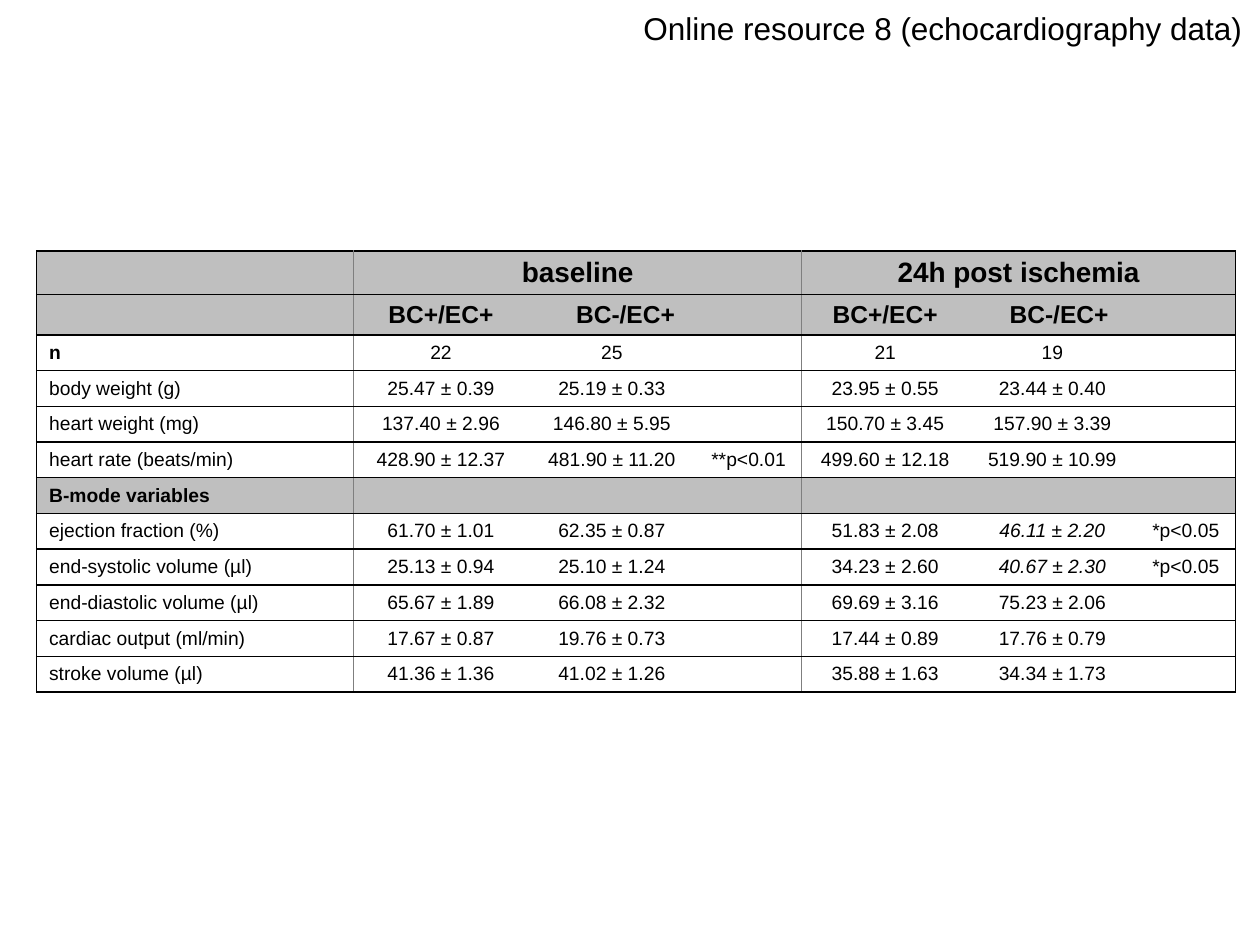
from lxml import etree
from pptx import Presentation
from pptx.dml.color import RGBColor
from pptx.enum.text import MSO_ANCHOR, PP_ALIGN
from pptx.oxml.ns import qn
from pptx.util import Cm, Pt

MIDDLE = MSO_ANCHOR.MIDDLE
LEFT, CENTER = PP_ALIGN.LEFT, PP_ALIGN.CENTER
BLACK, WHITE, GRAY, RULE = "000000", "FFFFFF", "BFBFBF", "7F7F7F"

# Content
TITLE = "Online resource 8 (echocardiography data)"
ROWS = [
    ("", "baseline", "", "", "24h post ischemia", "", ""),
    ("", "BC+/EC+", "BC-/EC+", "", "BC+/EC+", "BC-/EC+", ""),
    ("n", "22", "25", "", "21", "19", ""),
    ("body weight (g)", "25.47 ± 0.39", "25.19 ± 0.33", "",
     "23.95 ± 0.55", "23.44 ± 0.40", ""),
    ("heart weight (mg)", "137.40 ± 2.96", "146.80 ± 5.95", "",
     "150.70 ± 3.45", "157.90 ± 3.39", ""),
    ("heart rate (beats/min)", "428.90 ± 12.37", "481.90 ± 11.20", "**p<0.01",
     "499.60 ± 12.18", "519.90 ± 10.99", ""),
    ("B-mode variables", "", "", "", "", "", ""),
    ("ejection fraction (%)", "61.70 ± 1.01", "62.35 ± 0.87", "",
     "51.83 ± 2.08", "46.11 ± 2.20", "*p<0.05"),
    ("end-systolic volume (µl)", "25.13 ± 0.94", "25.10 ± 1.24", "",
     "34.23 ± 2.60", "40.67 ± 2.30", "*p<0.05"),
    ("end-diastolic volume (µl)", "65.67 ± 1.89", "66.08 ± 2.32", "",
     "69.69 ± 3.16", "75.23 ± 2.06", ""),
    ("cardiac output (ml/min)", "17.67 ± 0.87", "19.76 ± 0.73", "",
     "17.44 ± 0.89", "17.76 ± 0.79", ""),
    ("stroke volume (µl)", "41.36 ± 1.36", "41.02 ± 1.26", "",
     "35.88 ± 1.63", "34.34 ± 1.73", ""),
]

# Layout rules
WIDTHS = [6.39, 3.52, 3.37, 2.14, 3.37, 3.37, 2.01]
HEIGHTS = [0.88, 0.81, 0.69, 0.69, 0.69, 0.69, 0.71, 0.71] + [0.69] * 4
SIZES = {0: 16, 1: 14}
BANDS = {0, 1, 6}
BOLD = {(2, 0), (6, 0)}
ITALIC = {(7, 5), (8, 5)}
SHIFTS = {(1, 2): 0.55, (1, 5): 0.27}
GROUPS = {1, 4}
SPAN = 3
EDGES = {0: BLACK, 1: RULE, 4: RULE, 7: BLACK}


def color(code):
    return RGBColor.from_string(code)


def style(para, size, bold=False, italic=False):
    font = para.font
    font.name, font.size = "Arial", Pt(size)
    font.bold, font.italic = bold, italic
    font.color.rgb = color(BLACK)


def border(cell, side, code):
    props = cell._tc.get_or_add_tcPr()
    line = etree.SubElement(props, qn("a:ln" + side), w=str(Pt(1)))
    if code is None:
        etree.SubElement(line, qn("a:noFill"))
    else:
        fill = etree.SubElement(line, qn("a:solidFill"))
        etree.SubElement(fill, qn("a:srgbClr"), val=code)


def fill_cell(cell, row, col, text):
    last = col + (SPAN if row == 0 and col in GROUPS else 1)
    for side, code in (("L", EDGES.get(col)), ("R", EDGES.get(last)),
                       ("T", BLACK), ("B", BLACK)):
        border(cell, side, code)
    cell.fill.solid()
    cell.fill.fore_color.rgb = color(GRAY if row in BANDS else WHITE)
    cell.vertical_anchor = MIDDLE
    cell.margin_left = Cm(0.25 + SHIFTS.get((row, col), 0))
    cell.margin_right = Cm(0.25)
    cell.margin_top = cell.margin_bottom = Cm(0.12)
    para = cell.text_frame.paragraphs[0]
    para.alignment = CENTER if col else LEFT
    if text:
        para.text = text
        style(para, SIZES.get(row, 11), row < 2 or (row, col) in BOLD,
              (row, col) in ITALIC)
    else:
        # Keep empty cells from stretching their row
        etree.SubElement(para._p, qn("a:endParaRPr"), sz="1100")


deck = Presentation()
deck.slide_width, deck.slide_height = Cm(25.4), Cm(19.05)
slide = deck.slides.add_slide(deck.slide_layouts[6])

# Table
table = slide.shapes.add_table(
    len(ROWS), len(WIDTHS), Cm(0.74), Cm(5.06),
    Cm(sum(WIDTHS)), Cm(sum(HEIGHTS))).table
table.first_row = table.horz_banding = False
for part, width in zip(table.columns, WIDTHS):
    part.width = Cm(width)
for part, height in zip(table.rows, HEIGHTS):
    part.height = Cm(height)
for col in GROUPS:
    table.cell(0, col).merge(table.cell(0, col + SPAN - 1))
for row, texts in enumerate(ROWS):
    for col, text in enumerate(texts):
        fill_cell(table.cell(row, col), row, col, text)

# Title
box = slide.shapes.add_textbox(Cm(12.72), Cm(0.05), Cm(12.7), Cm(1.02))
box.text_frame.word_wrap = False
head = box.text_frame.paragraphs[0]
head.text = TITLE
style(head, 18)

deck.save("out.pptx")
